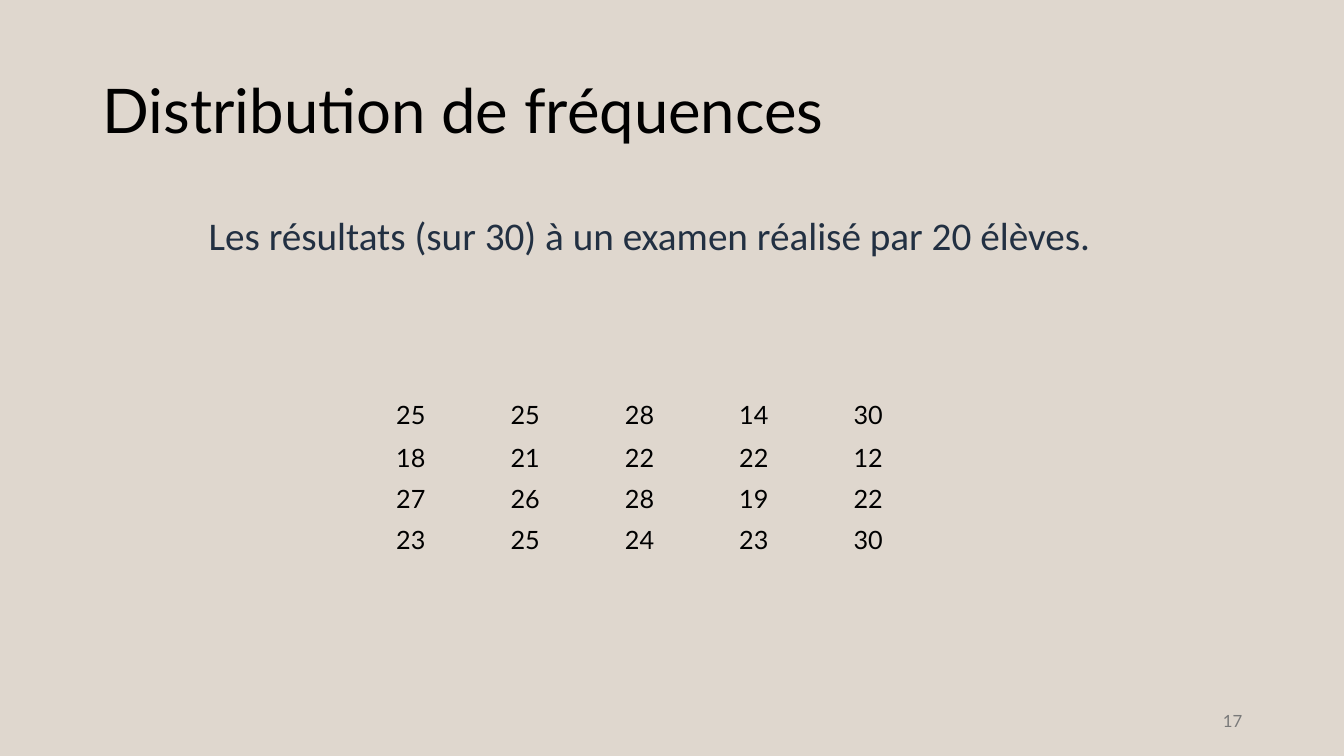
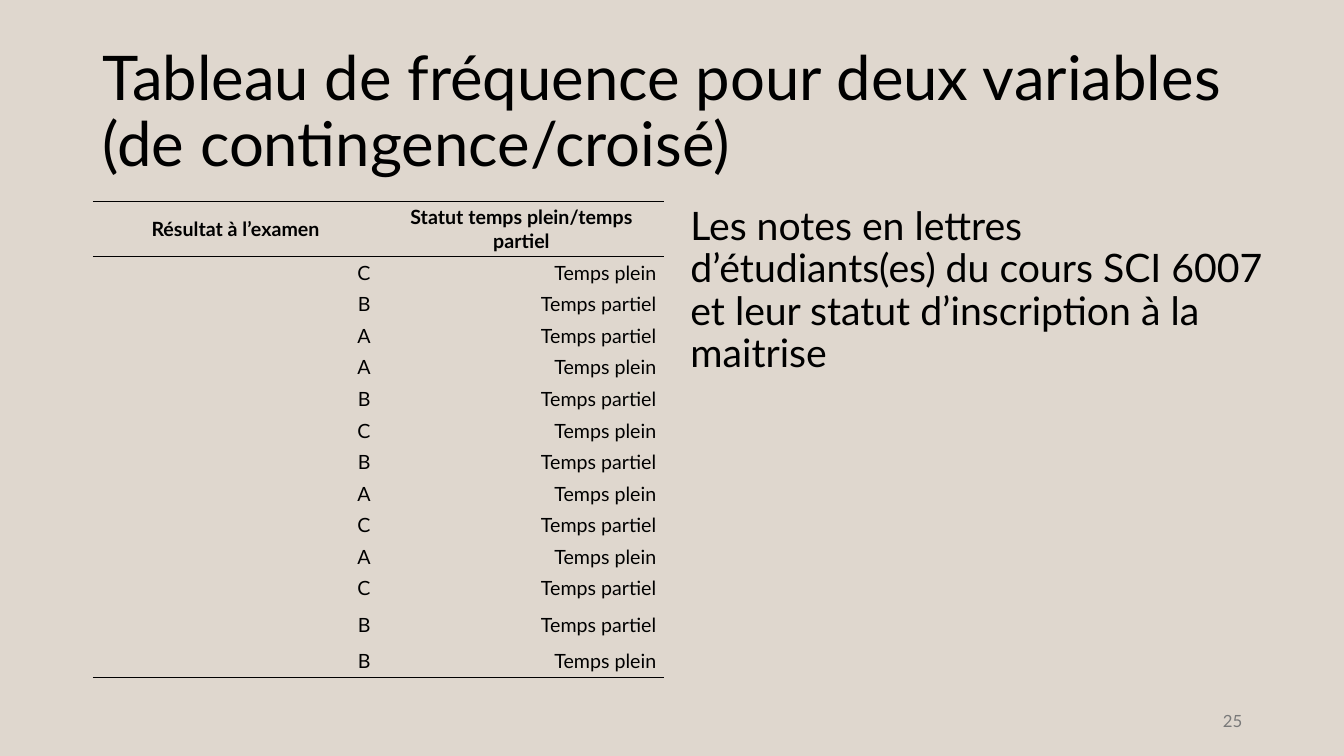
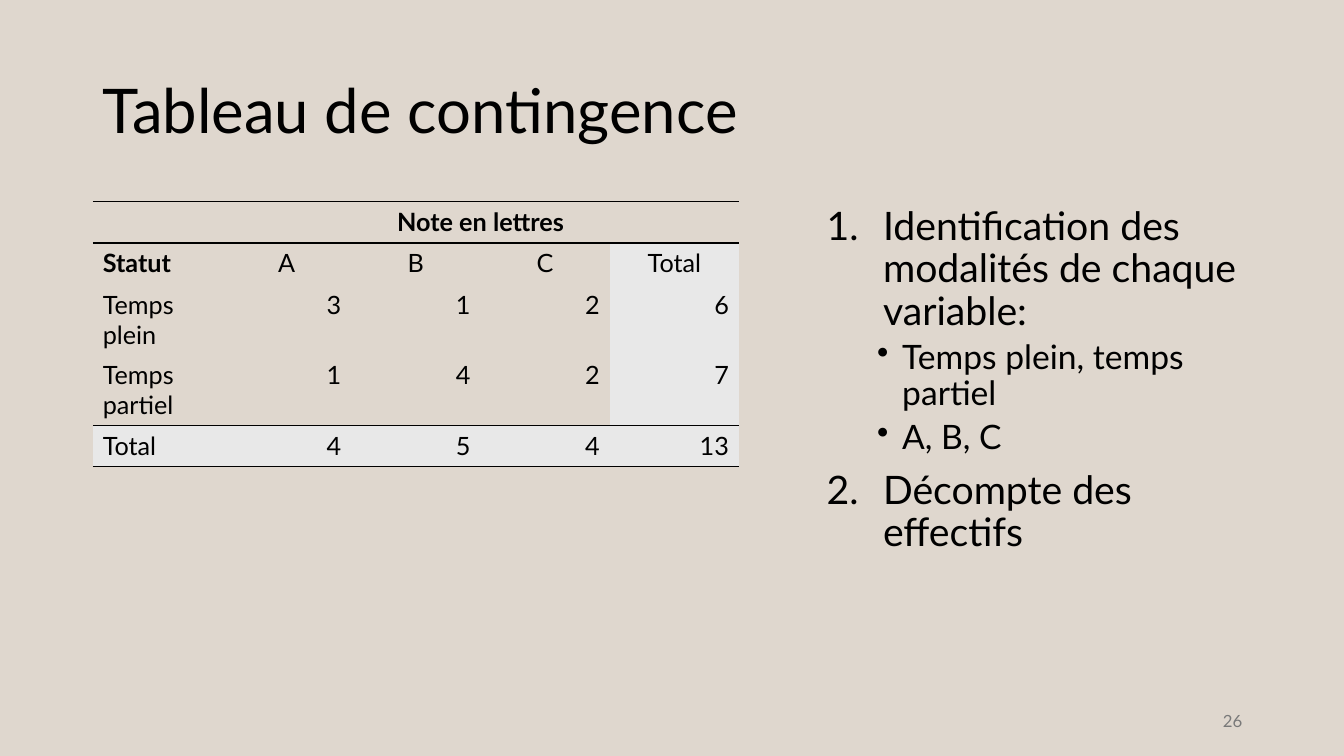
from dataclasses import dataclass

from lxml.etree import SubElement
from pptx import Presentation
from pptx.dml.color import RGBColor
from pptx.enum.text import MSO_ANCHOR as Anchor, PP_ALIGN as Align
from pptx.oxml.ns import qn
from pptx.util import Inches, Pt

NO_GRID_STYLE = "{2D5ABB26-0587-4C30-8999-92F81FD0307C}"


@dataclass(frozen=True)
class Theme:
    background: str = "DFD7CE"
    ink: str = "000000"
    navy: str = "223042"
    grey: str = "797979"
    total_fill: str = "E8E8E8"
    font: str = "Lato"
    subtitle_font: str = "Calibri"
    title_size: int = 44
    body_size: int = 28
    sub_size: int = 24
    table_size: int = 18
    small_table_size: int = 14
    number_size: int = 12
    left: float = 0.92
    content_top: float = 2


THEME = Theme()


def write(paragraph, text, *, size=THEME.body_size, color=THEME.ink, font=THEME.font,
          bold=False, align=Align.LEFT, line_spacing=None, before=None):
    paragraph.alignment = align
    if line_spacing:
        paragraph.line_spacing = line_spacing
    if before is not None:
        paragraph.space_before = Pt(before)
    run = paragraph.add_run()
    run.text = text
    run.font.name = font
    run.font.size = Pt(size)
    run.font.bold = bold
    run.font.color.rgb = RGBColor.from_string(color)


def set_bullet(paragraph, tag, *, left, hanging, **attributes):
    properties = paragraph._p.get_or_add_pPr()
    properties.set("marL", str(Inches(left)))
    properties.set("indent", str(-Inches(hanging)))
    SubElement(properties, qn(tag), attributes)


def rule_cell(cell, sides):
    """Draw a 1 pt line on the given sides, "T" before "B"; call before filling."""
    for side in sides:
        line = SubElement(cell._tc.get_or_add_tcPr(), qn(f"a:ln{side}"), w=str(Pt(1)))
        fill = SubElement(line, qn("a:solidFill"))
        SubElement(fill, qn("a:srgbClr"), val=THEME.ink)


class Deck:
    def __init__(self):
        self.presentation = Presentation()
        self.presentation.slide_width = Inches(13.33)
        self.presentation.slide_height = Inches(7.5)
        fill = self.presentation.slide_master.background.fill
        fill.solid()
        fill.fore_color.rgb = RGBColor.from_string(THEME.background)
        self.slide = None

    def add_slide(self, title, number):
        self.slide = self.presentation.slides.add_slide(self.presentation.slide_layouts[6])
        frame = self.text_frame(THEME.left, 0.4, 11.5, 1.45, anchor=Anchor.MIDDLE)
        write(frame.paragraphs[0], title, size=THEME.title_size, line_spacing=0.9)
        frame = self.text_frame(9.42, 6.95, 3, 0.4, anchor=Anchor.MIDDLE)
        write(frame.paragraphs[0], str(number), size=THEME.number_size,
              color=THEME.grey, align=Align.RIGHT)

    def text_frame(self, left, top, width, height, anchor=Anchor.TOP):
        box = self.slide.shapes.add_textbox(*map(Inches, (left, top, width, height)))
        box.text_frame.word_wrap = True
        box.text_frame.vertical_anchor = anchor
        return box.text_frame

    def body(self, text, *position, **text_format):
        frame = self.text_frame(*position)
        write(frame.paragraphs[0], text, line_spacing=0.9, before=10, **text_format)

    def outline(self, items, *position):
        """Write (level, text) items: numbers at level 0, dots at level 1."""
        frame = self.text_frame(*position)
        for index, (level, text) in enumerate(items):
            paragraph = frame.add_paragraph() if index else frame.paragraphs[0]
            paragraph.level = level
            size, before = ((THEME.body_size, 10), (THEME.sub_size, 5))[level]
            write(paragraph, text, size=size, line_spacing=0.9, before=before)
            if level:
                set_bullet(paragraph, "a:buChar", left=0.75, hanging=0.25, char="•")
            else:
                set_bullet(paragraph, "a:buAutoNum", left=0.56, hanging=0.56,
                           type="arabicPeriod")

    def table(self, rows, left, top, width, heights, cell_format, *,
              size=THEME.table_size, margins=(0.1, 0.05), anchor=Anchor.TOP):
        """cell_format(row, column) gives a dict: align, bold, sides, fill."""
        columns = len(rows[0])
        frame = self.slide.shapes.add_table(
            len(rows), columns, *map(Inches, (left, top, width, sum(heights))))
        table = frame.table
        table.first_row = table.horz_banding = False
        table._tbl.tblPr.find(qn("a:tableStyleId")).text = NO_GRID_STYLE
        for column in table.columns:
            column.width = Inches(width / columns)
        for row_index, (texts, height) in enumerate(zip(rows, heights)):
            table.rows[row_index].height = Inches(height)
            for column_index, text in enumerate(texts):
                cell = table.cell(row_index, column_index)
                look = cell_format(row_index, column_index)
                cell.margin_left = cell.margin_right = Inches(margins[0])
                cell.margin_top = cell.margin_bottom = Inches(margins[1])
                cell.vertical_anchor = anchor
                rule_cell(cell, look.get("sides", ""))
                if look.get("fill"):
                    cell.fill.solid()
                    cell.fill.fore_color.rgb = RGBColor.from_string(look["fill"])
                else:
                    cell.fill.background()
                if text:
                    write(cell.text_frame.paragraphs[0], text, size=size,
                          align=look.get("align", Align.LEFT), bold=look.get("bold", False))
        return table


def scores_slide(deck):
    deck.add_slide("Distribution de fréquences", 17)
    deck.body("Les résultats (sur 30) à un examen réalisé par 20 élèves.",
              THEME.left, 2.1, 11.04, 0.88, align=Align.CENTER,
              color=THEME.navy, font=THEME.subtitle_font)
    scores = ["25 25 28 14 30", "18 21 22 22 12", "27 26 28 19 22", "23 25 24 23 30"]
    deck.table([line.split() for line in scores], 3.83, 3.91, 5.67,
               [0.43] + [0.41] * 3, lambda row, column: {})


def grades_slide(deck):
    deck.add_slide("Tableau de fréquence pour deux variables (de contingence/croisé)", 25)
    status = {"+": "Temps plein", "-": "Temps partiel"}
    students = "C+ B- A- A+ B- C+ B- A+ C- A+ C- B- B+".split()
    rows = [("Résultat à l’examen", "Statut temps plein/temps partiel")]
    rows += [(grade, status[mark]) for grade, mark in students]

    def grade_format(row, column):
        if row == 0:
            return {"align": Align.CENTER, "bold": True, "sides": "TB"}
        return {"align": Align.RIGHT, "sides": "B" if row == len(rows) - 1 else ""}

    deck.table(rows, THEME.left, THEME.content_top, 5.67,
               [0.51] + [0.3] * 11 + [0.41, 0.3], grade_format,
               size=THEME.small_table_size, margins=(0.08, 0.04), anchor=Anchor.MIDDLE)
    deck.body("Les notes en lettres d’étudiants(es) du cours SCI 6007 "
              "et leur statut d’inscription à la maitrise",
              6.75, THEME.content_top, 5.94, 4.76)


def contingency_slide(deck):
    deck.add_slide("Tableau de contingence", 26)
    deck.outline([(0, "Identification des modalités de chaque variable:"),
                  (1, "Temps plein, temps partiel"),
                  (1, "A, B, C"),
                  (0, "Décompte des effectifs")],
                 8.1, THEME.content_top, 4.32, 4.53)
    rows = [("", "Note en lettres", "", "", ""),
            ("Statut", "A", "B", "C", "Total"),
            ("Temps plein", "3", "1", "2", "6"),
            ("Temps partiel", "1", "4", "2", "7"),
            ("Total", "4", "5", "4", "13")]
    last = len(rows) - 1

    def count_format(row, column):
        is_total = row == last or (row > 0 and column == 4)
        number_align = Align.CENTER if row < 2 else Align.RIGHT
        return {"align": number_align if column else Align.LEFT,
                "bold": row == 0 or (row, column) == (1, 0),
                "sides": "TB" if row in (0, last) else "",
                "fill": THEME.total_fill if is_total else None}

    table = deck.table(rows, THEME.left, THEME.content_top, 6.41, [0.41] * 5, count_format)
    table.cell(0, 1).merge(table.cell(0, 4))


def main():
    deck = Deck()
    scores_slide(deck)
    grades_slide(deck)
    contingency_slide(deck)
    deck.presentation.save("out.pptx")


if __name__ == "__main__":
    main()
